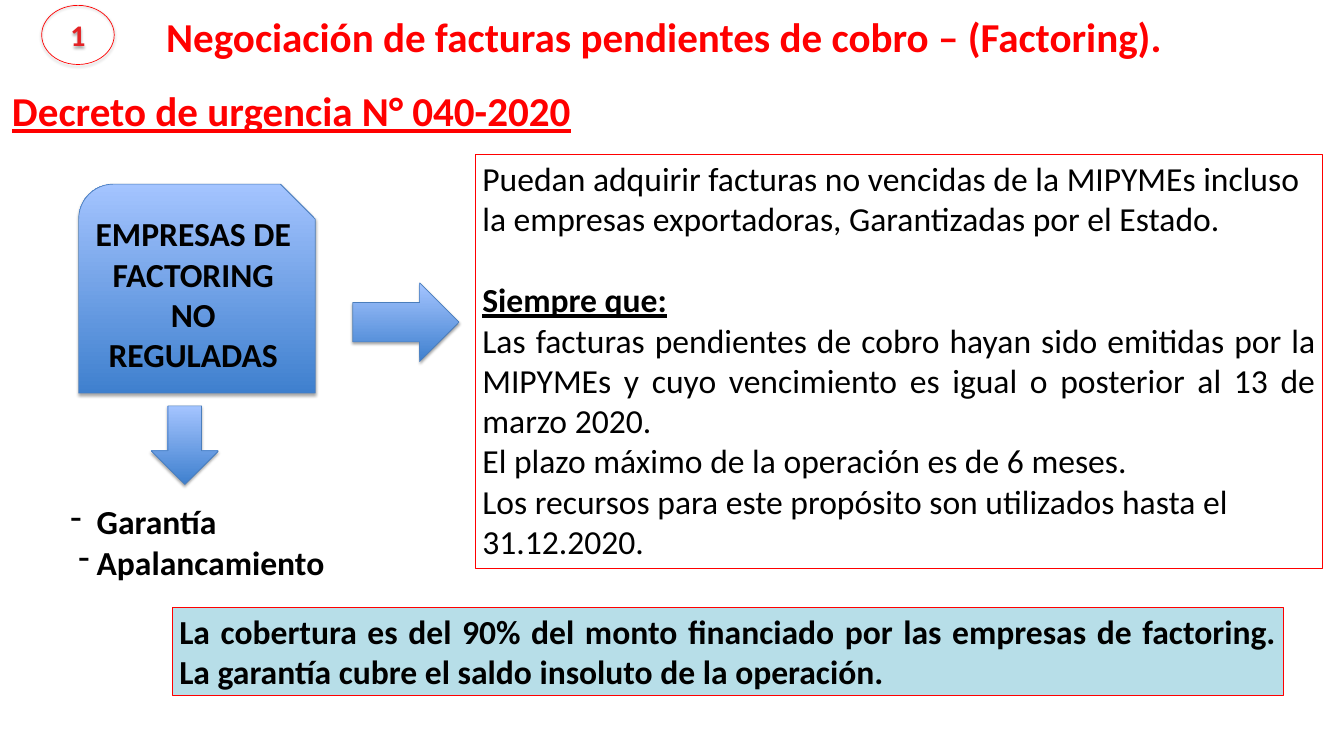
from dataclasses import dataclass

from lxml import etree
from pptx import Presentation
from pptx import util as u
from pptx.dml.color import RGBColor
from pptx.enum import shapes, text
from pptx.oxml.ns import qn

COLUMNS, ROWS = 20, 11.25
PRESET = shapes.MSO_SHAPE
ALIGN = text.PP_ALIGN


@dataclass(frozen=True)
class Theme:
    font: str = "Calibri"
    heading: int = 44
    body: int = 36
    badge: int = 32
    ink: str = "000000"
    red: str = "FF0000"
    badge_red: str = "E32326"
    pale: str = "B7DEE8"
    edge: str = "4B7EBC"
    gradient: tuple = ("3F80CE", "A4C4FF")


class SlideBuilder:
    def __init__(self, deck, theme):
        self.theme = theme
        self.column = deck.slide_width / COLUMNS
        self.row = deck.slide_height / ROWS
        self.slide = deck.slides.add_slide(deck.slide_layouts[6])

    def place(self, left, top, width, height):
        return [round(n * unit) for n, unit in zip(
            (left, top, width, height), (self.column, self.row) * 2)]

    def fill_text(self, shape, paragraphs, anchor=text.MSO_ANCHOR.TOP, wrap=True,
                  grow=True, **common):
        auto = text.MSO_AUTO_SIZE
        frame = shape.text_frame
        frame.word_wrap = wrap
        frame.vertical_anchor = anchor
        frame.auto_size = auto.SHAPE_TO_FIT_TEXT if grow else auto.NONE
        for index, (words, own) in enumerate(paragraphs):
            paragraph = frame.paragraphs[0] if index == 0 else frame.add_paragraph()
            self.style_paragraph(paragraph, words, {**common, **own})

    def style_paragraph(self, paragraph, words, style):
        if "dash" in style:
            self.dash(paragraph, *style["dash"])
        paragraph.alignment = style.get("align", ALIGN.LEFT)
        if "before" in style:
            paragraph.space_before = u.Pt(style["before"])
        run = paragraph.add_run()
        run.text = words
        values = {
            "name": self.theme.font,
            "size": u.Pt(style.get("size", self.theme.body)),
            "bold": style.get("bold", False),
            "underline": style.get("underline", False),
        }
        for name, value in values.items():
            setattr(run.font, name, value)
        run.font.color.rgb = RGBColor.from_string(style.get("color", self.theme.ink))

    def dash(self, paragraph, margin, hanging):
        properties = paragraph._p.get_or_add_pPr()
        properties.set("marL", str(round(margin * self.column)))
        properties.set("indent", str(-round(hanging * self.column)))
        etree.SubElement(properties, qn("a:buChar"), char="-")

    def label(self, box, paragraphs, **style):
        self.fill_text(self.slide.shapes.add_textbox(*self.place(*box)),
                       paragraphs, **style)

    def shape(self, preset, box, line, fill=None, weight=0.75, raised=False):
        shape = self.slide.shapes.add_shape(preset, *self.place(*box))
        shape.shadow.inherit = False
        if fill is None:
            shape.fill.background()
        elif isinstance(fill, tuple):
            shape.fill.gradient()
            shape.fill.gradient_angle = 90
            for stop, color in zip(shape.fill.gradient_stops, fill):
                stop.color.rgb = RGBColor.from_string(color)
        else:
            shape.fill.solid()
            shape.fill.fore_color.rgb = RGBColor.from_string(fill)
        shape.line.color.rgb = RGBColor.from_string(line)
        shape.line.width = u.Pt(weight)
        if raised:
            self.raise_up(shape)
        return shape

    def raise_up(self, shape):
        effects = shape._element.spPr.find(qn("a:effectLst"))
        shadow = etree.SubElement(
            effects, qn("a:outerShdw"), blurRad=str(u.Pt(3.1)),
            dist=str(u.Pt(1.8)), dir="5400000", rotWithShape="0")
        color = etree.SubElement(shadow, qn("a:srgbClr"), val="000000")
        etree.SubElement(color, qn("a:alpha"), val="35000")

    def block(self, preset, box):
        return self.shape(preset, box, self.theme.edge, self.theme.gradient,
                          raised=True)


def main():
    deck = Presentation()
    deck.slide_width, deck.slide_height = u.Inches(20), u.Inches(11.25)
    theme = Theme()
    page = SlideBuilder(deck, theme)
    heading = {"size": theme.heading, "color": theme.red, "bold": True}
    centered = {"align": ALIGN.CENTER, "bold": True, "grow": False,
                "anchor": text.MSO_ANCHOR.MIDDLE}

    page.label((2.25, 0.12, 15.16, 0.84),
               [("Negociación de facturas pendientes de cobro – (Factoring).", {})],
               wrap=False, align=ALIGN.RIGHT, **heading)
    page.label((-0.1, 1.23, 8.88, 0.84),
               [("Decreto de urgencia N° 040-2020", {})],
               align=ALIGN.CENTER, underline=True, **heading)

    companies = page.block(PRESET.SNIP_ROUND_RECTANGLE, (1.17, 2.74, 3.52, 3.11))
    page.fill_text(companies, [("EMPRESAS DE FACTORING NO REGULADAS", {})], **centered)
    page.block(PRESET.RIGHT_ARROW, (5.25, 4.21, 1.58, 1.17))

    conditions = page.shape(PRESET.RECTANGLE, (7.08, 2.3, 12.6, 6.16),
                            theme.red, weight=1)
    page.fill_text(conditions, [
        ("Puedan adquirir facturas no vencidas de la MIPYMEs incluso la empresas "
         "exportadoras, Garantizadas por el Estado.", {}),
        ("Siempre que:", {"bold": True, "underline": True, "before": 43.5}),
        ("Las facturas pendientes de cobro hayan sido emitidas por la MIPYMEs y "
         "cuyo vencimiento es igual o posterior al 13 de marzo 2020.",
         {"align": ALIGN.JUSTIFY}),
        ("El plazo máximo de la operación es de 6 meses.", {}),
        ("Los recursos para este propósito son utilizados hasta el 31.12.2020.", {}),
    ])

    page.block(PRESET.DOWN_ARROW, (2.25, 6.04, 1, 1.17))
    page.label((0.95, 7.41, 4.5, 1.31),
               [("Garantía", {"dash": (0.39, 0.39)}),
                ("Apalancamiento", {"dash": (0.39, 0.27)})], bold=True)

    coverage = page.shape(PRESET.RECTANGLE, (2.57, 9.04, 16.53, 1.31),
                          theme.red, theme.pale)
    page.fill_text(coverage, [
        ("La cobertura es del 90% del monto financiado por las empresas de "
         "factoring. La garantía cubre el saldo insoluto de la operación.", {}),
    ], align=ALIGN.JUSTIFY, bold=True)

    badge = page.shape(PRESET.OVAL, (0.62, 0.08, 1.08, 0.88), theme.red, raised=True)
    page.fill_text(badge, [("1", {})], size=theme.badge, color=theme.badge_red,
                   **centered)

    deck.save("out.pptx")


if __name__ == "__main__":
    main()
